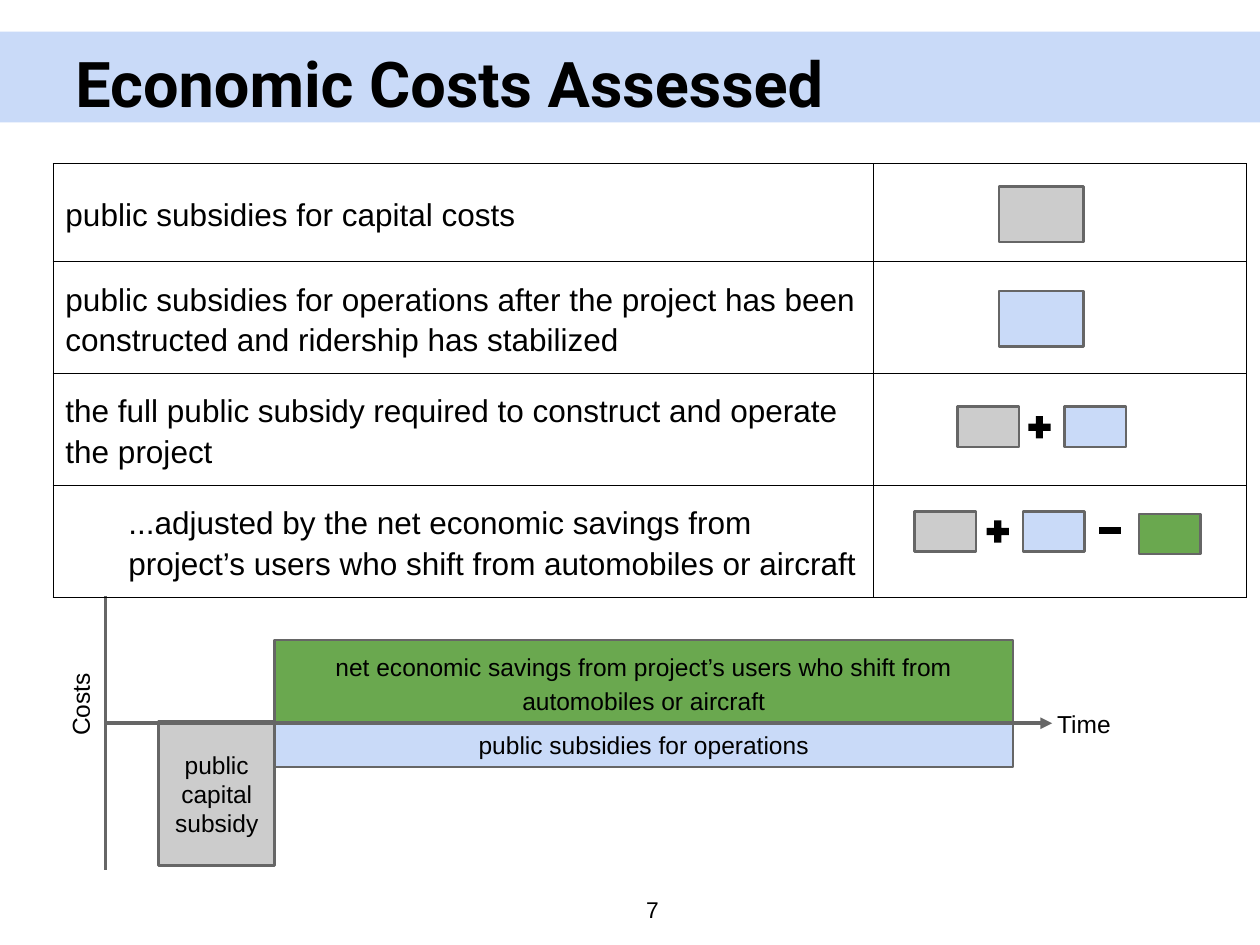
from lxml import etree
from pptx import Presentation
from pptx.dml.color import RGBColor
from pptx.enum import shapes, text
from pptx.oxml.ns import qn
from pptx.util import Cm, Pt

BLACK = RGBColor(0x00, 0x00, 0x00)
OUTLINE = RGBColor(0x66, 0x66, 0x66)
CAPITAL = RGBColor(0xCC, 0xCC, 0xCC)
OPERATIONS = RGBColor(0xC9, 0xDA, 0xF8)
SAVINGS = RGBColor(0x6A, 0xA8, 0x4F)

SHAPE = shapes.MSO_SHAPE
ALIGN = text.PP_ALIGN
ANCHOR = text.MSO_ANCHOR


def write(holder, frame, words, size, anchor=ANCHOR.MIDDLE, font="Arial", bold=False, **formats):
    """Put one paragraph in the frame; holder is the object that owns the margins."""
    for side in ("left", "top", "right", "bottom"):
        setattr(holder, f"margin_{side}", Cm(0.25))
    holder.vertical_anchor = anchor
    frame.word_wrap = True
    para = frame.paragraphs[0]
    for name, value in formats.items():
        setattr(para, name, value)
    span = para.add_run()
    span.text = words
    for name, value in {"name": font, "size": Pt(size), "bold": bold}.items():
        setattr(span.font, name, value)
    span.font.color.rgb = BLACK
    return para


def add_block(kind, left, top, width, height, color, outlined=True):
    block = page.shapes.add_shape(kind, Cm(left), Cm(top), Cm(width), Cm(height))
    block.shadow.inherit = False
    block.fill.solid()
    block.fill.fore_color.rgb = color
    if outlined:
        block.line.color.rgb = OUTLINE
        block.line.width = Pt(1.5)
    else:
        block.line.fill.background()
    return block


deck = Presentation()
deck.slide_width, deck.slide_height = Cm(25.4), Cm(19.05)
page = deck.slides.add_slide(deck.slide_layouts[5])

# Title on its band
title = page.shapes.title
title.left, title.top, title.width, title.height = Cm(1.27), Cm(-0.51), Cm(22.86), Cm(3.18)
write(title.text_frame, title.text_frame, "Economic Costs Assessed", 36,
      anchor=ANCHOR.BOTTOM, font="Roboto", bold=True, alignment=ALIGN.LEFT)
band = add_block(SHAPE.RECTANGLE, 0, 0.64, 25.4, 1.83, OPERATIONS, outlined=False)
title.element.addprevious(band.element)

# Axis labels and page number
labels = [
    ("7", 13, (12.01, 17.6, 1.52, 1.45), 0, ANCHOR.MIDDLE, ALIGN.RIGHT),
    ("Time", 14, (21.06, 14.05, 1.7, 1.52), 0, ANCHOR.TOP, ALIGN.LEFT),
    ("Costs", 14, (0.79, 13.28, 2.08, 1.52), 270, ANCHOR.TOP, ALIGN.LEFT),
]
for words, size, place, rotation, anchor, alignment in labels:
    box = page.shapes.add_textbox(*map(Cm, place))
    box.rotation = rotation
    write(box.text_frame, box.text_frame, words, size, anchor=anchor, alignment=alignment)

# Costs over time
periods = [
    ("public capital subsidy", (3.2, 14.55, 2.34, 2.9), CAPITAL, 1.0),
    ("public subsidies for operations", (5.54, 14.55, 14.88, 0.91), OPERATIONS, 1.0),
    ("net economic savings from project’s users who shift from automobiles or aircraft",
     (5.54, 12.9, 14.88, 1.68), SAVINGS, 1.15),
]
for words, place, color, spacing in periods:
    block = add_block(SHAPE.RECTANGLE, *place, color)
    write(block.text_frame, block.text_frame, words, 14,
          alignment=ALIGN.CENTER, line_spacing=spacing)

axes = [((2.16, 14.58, 21.21, 14.58), 2.25, True), ((2.13, 17.53, 2.13, 12.01), 1.5, False)]
for ends, weight, arrow in axes:
    axis = page.shapes.add_connector(shapes.MSO_CONNECTOR.STRAIGHT, *map(Cm, ends))
    axis.line.color.rgb = OUTLINE
    axis.line.width = Pt(weight)
    if arrow:
        etree.SubElement(axis.line._get_or_add_ln(), qn("a:tailEnd"), type="triangle")
    etree.SubElement(axis.element.spPr, qn("a:effectLst"))

# Table of cost measures
measures = [
    "public subsidies for capital costs",
    "public subsidies for operations after the project has been constructed and ridership has stabilized",
    "the full public subsidy required to construct and operate the project",
    "...adjusted by the net economic savings from project’s users who shift from automobiles or aircraft",
]
heights = [1.98, 2.14, 2.14, 2.14]
widths = [16.54, 7.52]
table = page.shapes.add_table(len(measures), 2, Cm(1.07), Cm(3.3),
                              Cm(sum(widths)), Cm(sum(heights))).table
table.first_row = table.horz_banding = False
for column, width in zip(table.columns, widths):
    column.width = Cm(width)
for row, height, words in zip(table.rows, heights, measures):
    row.height = Cm(height)
    para = write(row.cells[0], row.cells[0].text_frame, words, 18, line_spacing=1.15)
    if words.startswith("..."):
        para._p.get_or_add_pPr().set("marL", str(Cm(1.27)))
    for cell in row.cells:
        properties = cell._tc.get_or_add_tcPr()
        for edge in ("lnL", "lnR", "lnT", "lnB"):
            border = etree.SubElement(properties, qn(f"a:{edge}"), w=str(Pt(0.75)))
            fill = etree.SubElement(border, qn("a:solidFill"))
            etree.SubElement(fill, qn("a:srgbClr"), val=str(BLACK))
        cell.fill.background()

# Symbols in the right column
for top, color in [(3.76, CAPITAL), (5.87, OPERATIONS)]:
    add_block(SHAPE.RECTANGLE, 20.14, top, 1.7, 1.12, color)

terms = [
    (19.3, 8.2, CAPITAL), (21.46, 8.2, OPERATIONS),
    (18.44, 10.31, CAPITAL), (20.62, 10.31, OPERATIONS), (22.96, 10.36, SAVINGS),
]
for left, top, color in terms:
    add_block(SHAPE.RECTANGLE, left, top, 1.24, 0.81, color)

signs = [
    (SHAPE.MATH_PLUS, 20.65, 8.31), (SHAPE.MATH_PLUS, 19.81, 10.41), (SHAPE.MATH_MINUS, 22.07, 10.39),
]
for kind, left, top in signs:
    add_block(kind, left, top, 0.61, 0.61, BLACK, outlined=False)

deck.save("out.pptx")
